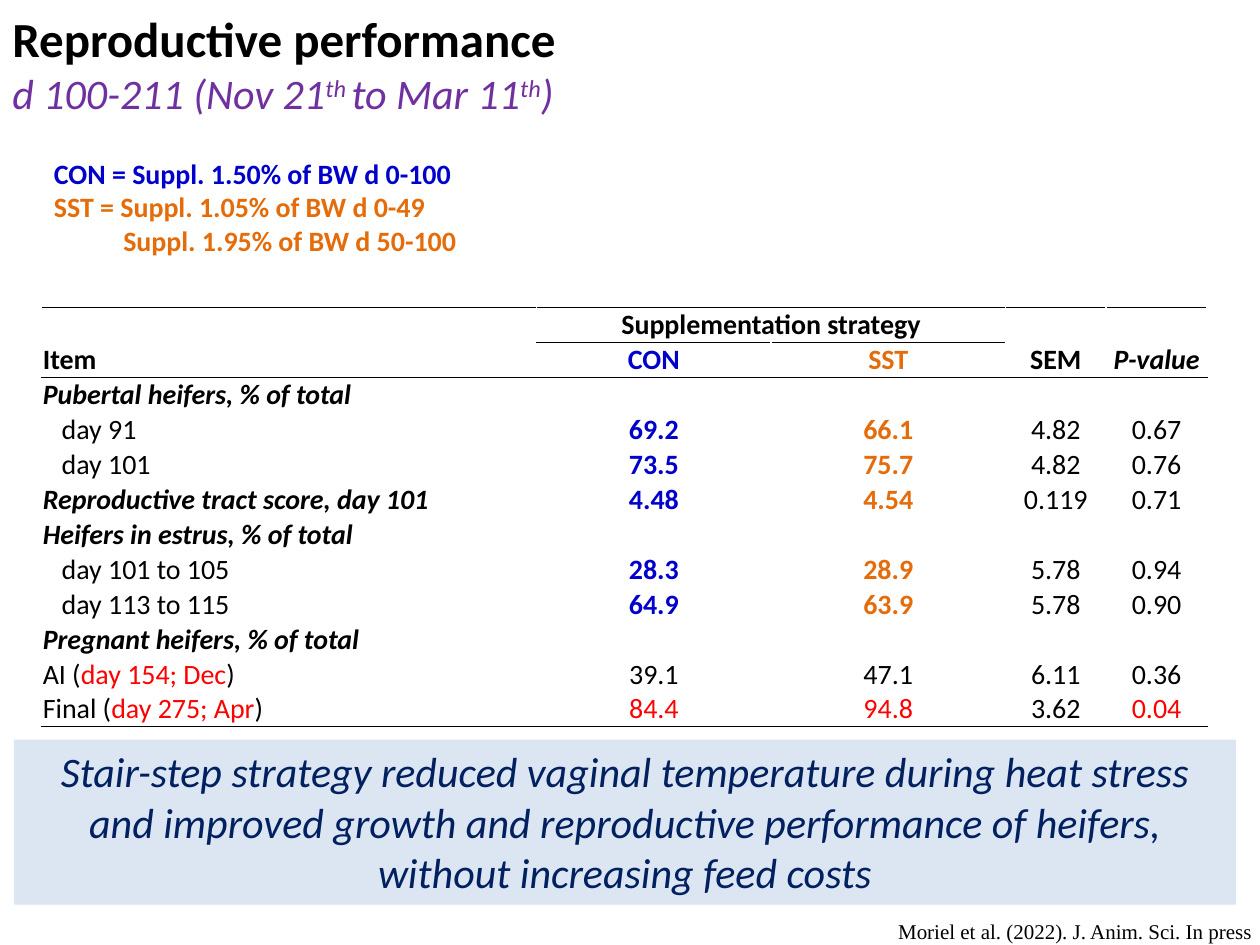
import pptx
import pptx.dml.color
import pptx.enum.shapes
import pptx.enum.text
import pptx.oxml
import pptx.oxml.ns
import pptx.util
from dataclasses import dataclass

Inches = pptx.util.Inches
PP_ALIGN = pptx.enum.text.PP_ALIGN
MSO_ANCHOR = pptx.enum.text.MSO_ANCHOR


@dataclass(frozen=True)
class Theme:
    font: str = "Calibri"
    cite_font: str = "Times New Roman"
    black: str = "000000"
    white: str = "FFFFFF"
    purple: str = "7030A0"
    con: str = "0000CC"
    sst: str = "E46C0A"
    red: str = "FF0000"
    navy: str = "002060"
    panel: str = "DCE6F2"
    title: int = 28
    large: int = 24
    body: int = 16
    cite: int = 12


T = Theme()


def style(font, size, color, bold=False, italic=False, name=T.font):
    font.name, font.size = name, pptx.util.Pt(size)
    font.bold, font.italic = bold, italic
    font.color.rgb = pptx.dml.color.RGBColor.from_string(color)


def set_border(cell, side, color):
    """Draw a 1 pt line on one side (L, R, T or B) of a cell."""
    cell._tc.get_or_add_tcPr().append(pptx.oxml.parse_xml(
        f'<a:ln{side} {pptx.oxml.ns.nsdecls("a")} w="12700"><a:solidFill>'
        f'<a:srgbClr val="{color}"/></a:solidFill></a:ln{side}>'))


prs = pptx.Presentation()
prs.slide_width, prs.slide_height = Inches(10), Inches(7.5)
s = prs.slides.add_slide(prs.slide_layouts[6])

# Title
tf = s.shapes.add_textbox(0, 0, Inches(9), Inches(1.25)).text_frame
tf.word_wrap = True
tf.margin_top = Inches(0.07)
p = tf.paragraphs[0]
r = p.add_run()
r.text = "Reproductive performance"
style(r.font, T.title, T.black, bold=True)
p.add_line_break()
for text, raised in [("d 100-211 (Nov 21", False), ("th ", True),
                     ("to Mar 11", False), ("th", True), (")", False)]:
    r = p.add_run()
    r.text = text
    style(r.font, T.large, T.purple, italic=True)
    if raised:
        r.font._element.set("baseline", "30000")

# Treatment key
tf = s.shapes.add_textbox(Inches(0.33), Inches(1.19), Inches(3.75), Inches(0.91)).text_frame
tf.word_wrap = True
key = [("CON = Suppl. 1.50% of BW d 0-100", T.con, 0),
       ("SST = Suppl. 1.05% of BW d 0-49", T.sst, 0),
       ("Suppl. 1.95% of BW d 50-100", T.sst, 0.55)]
for i, (text, color, indent) in enumerate(key):
    p = tf.add_paragraph() if i else tf.paragraphs[0]
    p.text = text
    p._p.get_or_add_pPr().set("marL", str(Inches(indent)))
    style(p.font, T.body, color, bold=True)

# Results table
rows = [
    ("", "Supplementation strategy", "", "", ""),
    ("Item", "CON", "SST", "SEM", "P-value"),
    ("Pubertal heifers, % of total", "", "", "", ""),
    ("day 91", "69.2", "66.1", "4.82", "0.67"),
    ("day 101", "73.5", "75.7", "4.82", "0.76"),
    ("Reproductive tract score, day 101", "4.48", "4.54", "0.119", "0.71"),
    ("Heifers in estrus, % of total", "", "", "", ""),
    ("day 101 to 105", "28.3", "28.9", "5.78", "0.94"),
    ("day 113 to 115", "64.9", "63.9", "5.78", "0.90"),
    ("Pregnant heifers, % of total", "", "", "", ""),
    (("AI (", "day 154; Dec", ")"), "39.1", "47.1", "6.11", "0.36"),
    (("Final (", "day 275; Apr", ")"), "84.4", "94.8", "3.62", "0.04"),
]
HEADER, FIRST_PREGNANT, LAST = 1, 10, len(rows) - 1
SECTIONS = (2, 5, 6, 9)
RED_CELLS = [(LAST, 1), (LAST, 2), (LAST, 4)]
treatment_colors = {1: T.con, 2: T.sst}

table = s.shapes.add_table(len(rows), 5, Inches(0.33), Inches(2.44),
                           Inches(9.25), Inches(3.33)).table
table.first_row = table.horz_banding = False
for column, width in zip(table.columns, (3.93, 1.86, 1.86, 0.8, 0.8)):
    column.width = Inches(width)
table.cell(0, 1).merge(table.cell(0, 2))

for i, row in enumerate(rows):
    for j, value in enumerate(row):
        cell = table.cell(i, j)
        cell.margin_left = cell.margin_right = Inches(0.01)
        cell.margin_top = cell.margin_bottom = 0
        cell.vertical_anchor = MSO_ANCHOR.BOTTOM
        spanned = j in treatment_colors
        line_above = i in (0, HEADER + 1) or (i == HEADER and spanned)
        line_below = i in (HEADER, LAST) or (i == 0 and spanned)
        set_border(cell, "L", T.white)
        set_border(cell, "R", T.white)
        set_border(cell, "T", T.black if line_above else T.white)
        set_border(cell, "B", T.black if line_below else T.white)
        cell.fill.background()

        p = cell.text_frame.paragraphs[0]
        p.alignment = PP_ALIGN.CENTER if j else PP_ALIGN.LEFT
        if not value:
            p._p.get_or_add_endParaRPr().set("sz", str(T.body * 100))
        elif isinstance(value, tuple):
            for text, color in zip(value, (T.black, T.red, T.black)):
                r = p.add_run()
                r.text = text
                style(r.font, T.body, color)
        else:
            p.text = value
            section = j == 0 and i in SECTIONS
            treatment = spanned and HEADER <= i < FIRST_PREGNANT
            color = treatment_colors[j] if treatment else T.black
            if (i, j) in RED_CELLS:
                color = T.red
            if value.startswith("day"):
                p._p.get_or_add_pPr().set("marL", str(Inches(0.15)))
            style(p.font, T.body, color, bold=i <= HEADER or section or treatment,
                  italic=section or value == "P-value")

# Citation
tf = s.shapes.add_textbox(Inches(7.03), Inches(7.21), Inches(3.27), Inches(0.32)).text_frame
tf.word_wrap = True
p = tf.paragraphs[0]
p.text = "Moriel et al. (2022). J. Anim. Sci. In press"
p.line_spacing = 1.15
style(p.font, T.cite, T.black, name=T.cite_font)

# Conclusion
sp = s.shapes.add_shape(pptx.enum.shapes.MSO_SHAPE.RECTANGLE,
                        Inches(0.11), Inches(5.87), Inches(9.7), Inches(1.31))
sp.shadow.inherit = False
sp.fill.solid()
sp.fill.fore_color.rgb = pptx.dml.color.RGBColor.from_string(T.panel)
sp.line.fill.background()
tf = sp.text_frame
tf.word_wrap = True
tf.vertical_anchor = MSO_ANCHOR.TOP
p = tf.paragraphs[0]
p.text = ("Stair-step strategy reduced vaginal temperature during heat stress and improved "
          "growth and reproductive performance of heifers, without increasing feed costs")
p.alignment = PP_ALIGN.CENTER
style(p.font, T.large, T.navy, italic=True)

prs.save("out.pptx")
